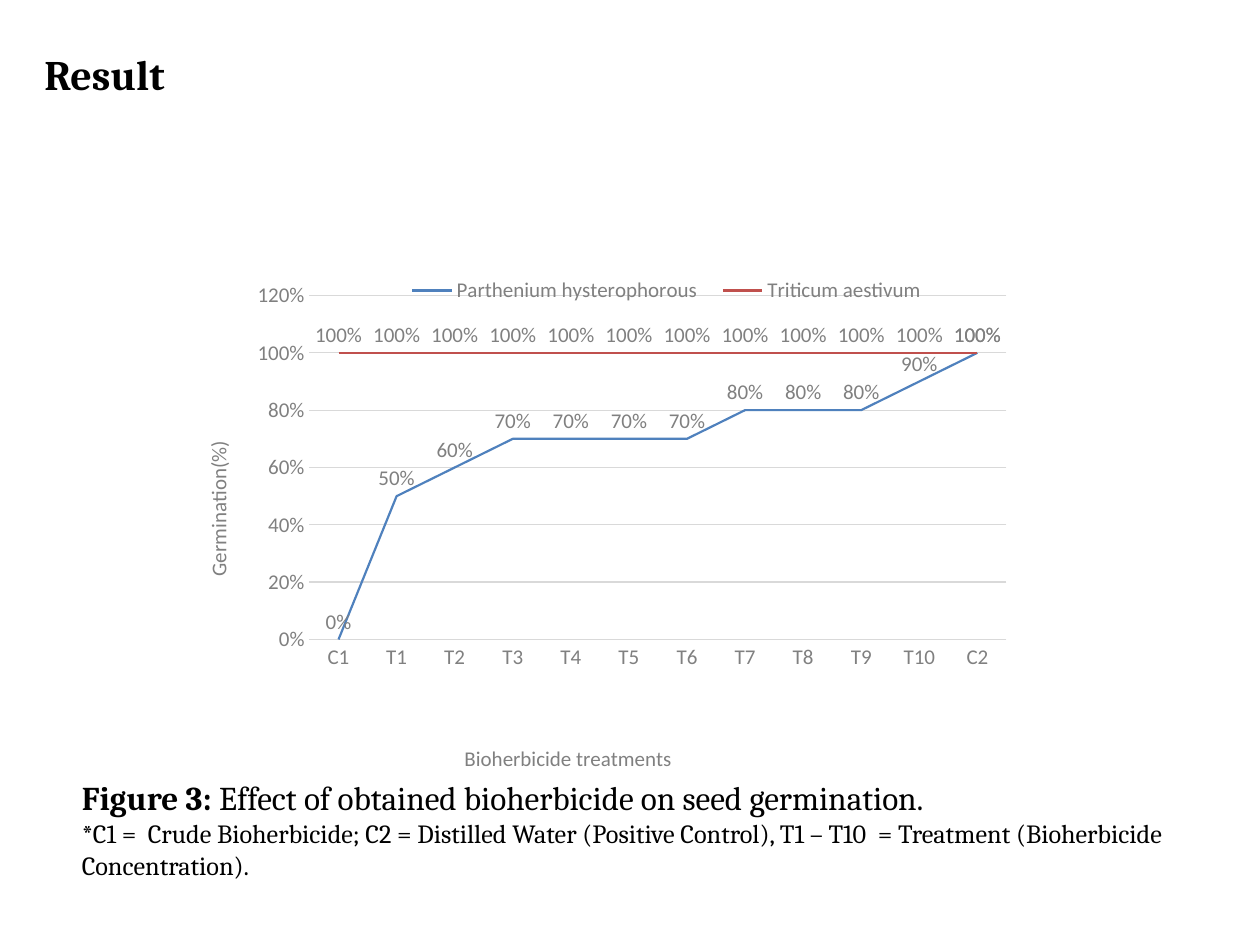
from lxml.etree import SubElement
from pptx import Presentation
from pptx.chart.data import CategoryChartData
from pptx.dml.color import RGBColor
from pptx.enum.chart import XL_CHART_TYPE, XL_LABEL_POSITION, XL_LEGEND_POSITION, XL_MARKER_STYLE, XL_TICK_MARK
from pptx.enum.text import MSO_ANCHOR, PP_ALIGN
from pptx.oxml.ns import qn
from pptx.util import Cm, Pt

BLACK = RGBColor(0x00, 0x00, 0x00)
GRAY = RGBColor(0x80, 0x80, 0x80)
LIGHT_GRAY = RGBColor(0xD9, 0xD9, 0xD9)
BLUE = RGBColor(0x4F, 0x81, 0xBD)
RED = RGBColor(0xC0, 0x50, 0x4D)

TREATMENTS = ["C1", *(f"T{number}" for number in range(1, 11)), "C2"]
GERMINATION = {
    "Parthenium hysterophorous": (BLUE, [0, 0.5, 0.6, 0.7, 0.7, 0.7, 0.7, 0.8, 0.8, 0.8, 0.9, 1]),
    "Triticum aestivum": (RED, [1] * len(TREATMENTS)),
}


def format_font(font, size, color, name, bold=False):
    """Set the look of a font."""
    font.size = Pt(size)
    font.name = name
    font.bold = bold
    font.color.rgb = color


def add_text(paragraph, text, **font_format):
    """Add a formatted run of text to a paragraph."""
    run = paragraph.add_run()
    run.text = text
    format_font(run.font, **font_format)


def place(element, index, target=None, **fractions):
    """Give a chart part a manual position in fractions of the chart."""
    for layout in element.findall(qn("c:layout")):
        element.remove(layout)
    layout = SubElement(element, qn("c:layout"))
    element.insert(index, layout)
    manual = SubElement(layout, qn("c:manualLayout"))
    if target:
        SubElement(manual, qn("c:layoutTarget")).set("val", target)
    for key in ("x", "y"):
        SubElement(manual, qn(f"c:{key}Mode")).set("val", "edge")
    for key, value in fractions.items():
        SubElement(manual, qn(f"c:{key}")).set("val", str(value))


class ResultSlide:
    """Hold the style and the current slide."""

    def __init__(self, presentation):
        self.slide = presentation.slides.add_slide(presentation.slide_layouts[5])
        self.body = {"color": BLACK, "name": "Cambria"}
        self.label = {"size": 12, "color": GRAY, "name": "Calibri"}

    def add_title(self, text, left, top, width, height):
        """Fill and move the title placeholder."""
        title = self.slide.shapes.title
        title.left, title.top, title.width, title.height = left, top, width, height
        title.text_frame.vertical_anchor = MSO_ANCHOR.TOP
        paragraph = title.text_frame.paragraphs[0]
        paragraph.alignment = PP_ALIGN.LEFT
        add_text(paragraph, text, size=24, bold=True, **self.body)

    def add_caption(self, heading, text, note, left, top, width, height):
        """Add the figure caption with its note."""
        frame = self.slide.shapes.add_textbox(left, top, width, height).text_frame
        frame.word_wrap = True
        paragraph = frame.paragraphs[0]
        add_text(paragraph, heading, size=19, bold=True, **self.body)
        add_text(paragraph, text, size=19, **self.body)
        add_text(frame.add_paragraph(), note, size=15, **self.body)

    def format_axis(self, axis, title, x, y, rotation):
        """Style an axis and place its title."""
        axis.major_tick_mark = axis.minor_tick_mark = XL_TICK_MARK.NONE
        format_font(axis.tick_labels.font, **self.label)
        frame = axis.axis_title.text_frame
        add_text(frame.paragraphs[0], title, **self.label)
        element = axis.axis_title._element
        element.find(".//" + qn("a:bodyPr")).set("rot", str(rotation * 60000))
        place(element, 1, x=x, y=y)

    def format_series(self, series, color):
        """Style a line and its value labels."""
        series.smooth = False
        series.marker.style = XL_MARKER_STYLE.NONE
        series.format.line.color.rgb = color
        series.format.line.width = Pt(1.25)
        labels = series.data_labels
        labels.show_value = True
        labels.position = XL_LABEL_POSITION.ABOVE
        labels.number_format = "0%"
        labels.number_format_is_linked = False
        format_font(labels.font, **self.label)

    def add_line_chart(self, left, top, width, height):
        """Add the germination chart."""
        data = CategoryChartData(number_format="0%")
        data.categories = TREATMENTS
        for name, (_, values) in GERMINATION.items():
            data.add_series(name, values)
        chart = self.slide.shapes.add_chart(XL_CHART_TYPE.LINE, left, top, width, height, data).chart
        format_font(chart.font, size=10, color=BLACK, name="Calibri")
        chart.has_title = False
        plot = chart.plots[0]
        plot.vary_by_categories = False
        for series in plot.series:
            self.format_series(series, GERMINATION[series.name][0])

        category_axis, value_axis = chart.category_axis, chart.value_axis
        self.format_axis(category_axis, "Bioherbicide treatments", x=0.33, y=0.92, rotation=0)
        self.format_axis(value_axis, "Germination(%)", x=0.02, y=0.32, rotation=-90)
        value_axis.minimum_scale, value_axis.maximum_scale, value_axis.major_unit = 0, 1.2, 0.2
        value_axis.tick_labels.number_format = "0%"
        value_axis.tick_labels.number_format_is_linked = False
        value_axis.format.line.fill.background()
        for line in (category_axis.format.line, value_axis.major_gridlines.format.line):
            line.color.rgb = LIGHT_GRAY
            line.width = Pt(0.75)

        chart.has_legend = True
        chart.legend.position = XL_LEGEND_POSITION.BOTTOM
        chart.legend.include_in_layout = False
        format_font(chart.legend.font, **self.label)
        place(chart.legend._element, 1, x=0.25, y=0, w=0.65, h=0.06)
        plot_area = chart._chartSpace.find(".//" + qn("c:plotArea"))
        place(plot_area, 0, target="inner", x=0.15, y=0.04, w=0.83, h=0.68)


def main():
    """Build the result slide."""
    presentation = Presentation()
    presentation.slide_width, presentation.slide_height = Cm(25.4), Cm(19.05)
    result = ResultSlide(presentation)
    result.add_title("Result", Cm(0.64), Cm(0.85), Cm(18.2), Cm(2.54))
    result.add_line_chart(Cm(3.7), Cm(5.55), Cm(16.93), Cm(10.2))
    result.add_caption(
        "Figure 3:",
        " Effect of obtained bioherbicide on seed germination.",
        "*C1 =  Crude Bioherbicide; C2 = Distilled Water (Positive Control), "
        "T1 – T10  = Treatment (Bioherbicide Concentration).",
        Cm(1.4), Cm(15.55), Cm(22.63), Cm(2.36),
    )
    presentation.save("out.pptx")


if __name__ == "__main__":
    main()
